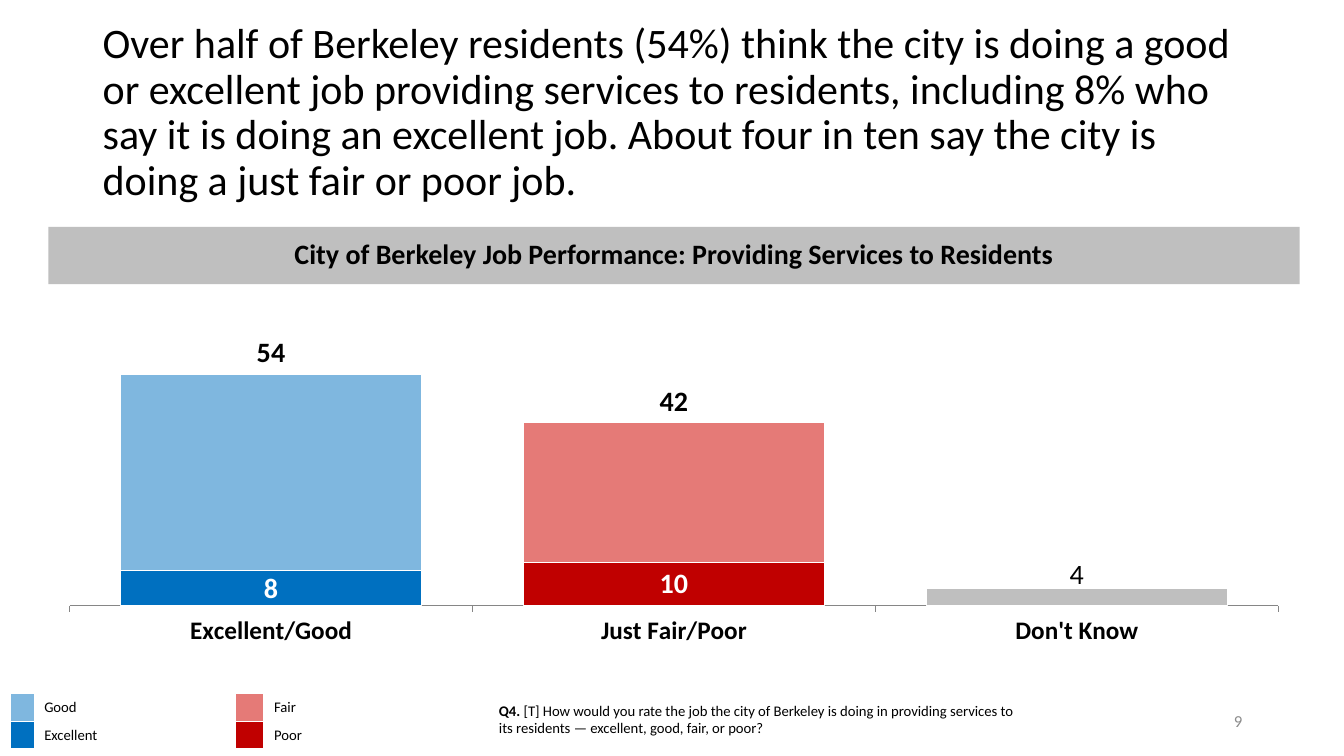
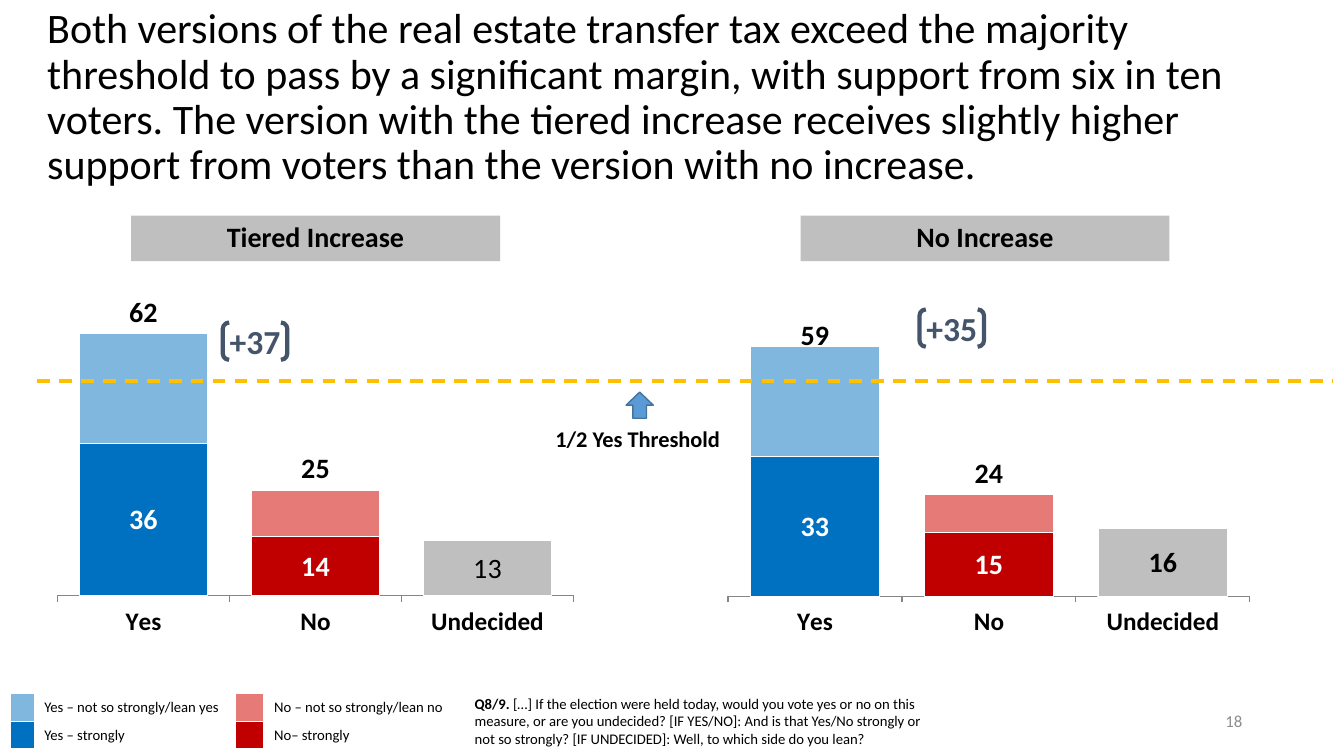
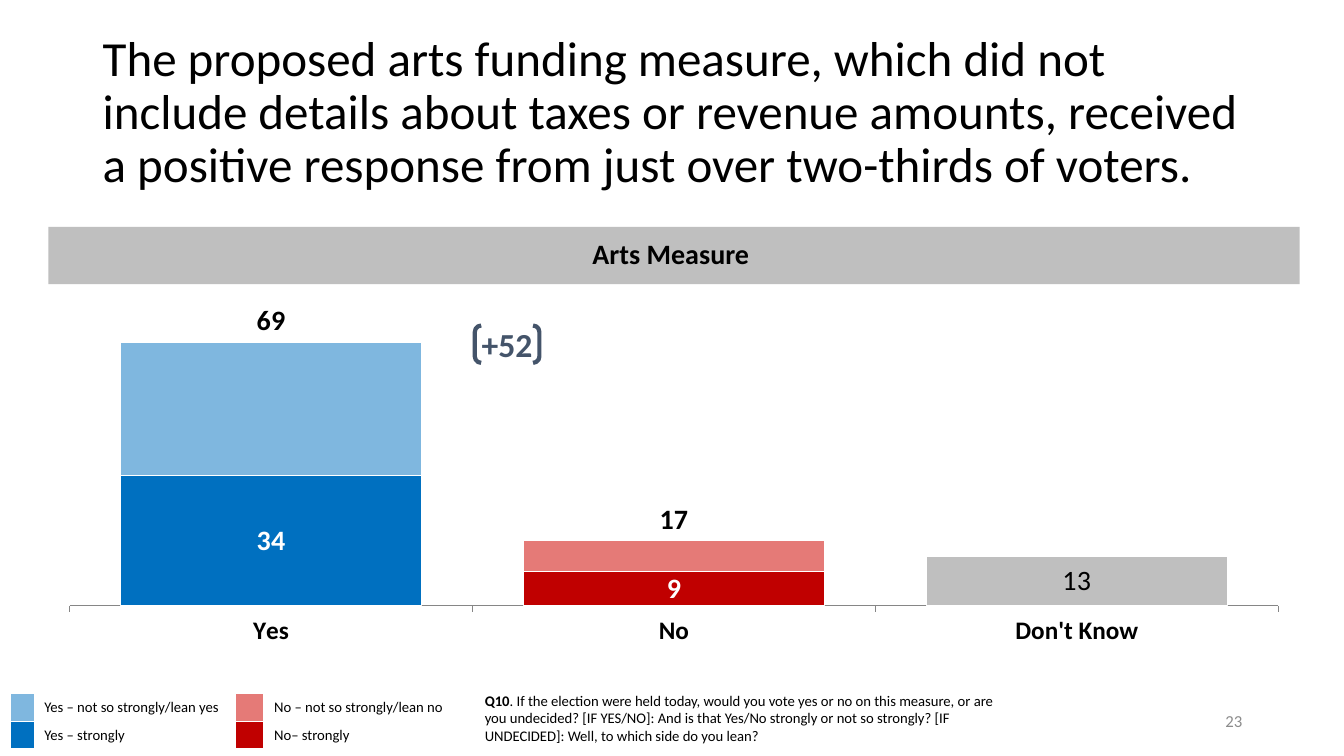
from lxml.etree import SubElement
from pptx import Presentation
from pptx.chart.data import CategoryChartData
from pptx.dml.color import RGBColor
from pptx.enum.chart import XL_CHART_TYPE, XL_LABEL_POSITION, XL_TICK_MARK
from pptx.enum.dml import MSO_LINE
from pptx.enum.shapes import MSO_CONNECTOR, MSO_SHAPE
from pptx.enum.text import MSO_ANCHOR, PP_ALIGN
from pptx.oxml import parse_xml
from pptx.oxml.ns import nsdecls, qn
from pptx.util import Inches, Pt

# Shared style
FACE = "Calibri"
BLACK, WHITE, GREY = "000000", "FFFFFF", "BFBFBF"
BLUE, RED, PINK = "0070C0", "C00000", "E57A77"
SLATE, GOLD = "44546A", "FFC000"
HALF = 50
WIDE = (0.48, 2.25, 12.41, 0.57)
FULL = (0.48, 2.77, 12.41, 3.69)
HEAD = (0.92, 0.4, 11.5, 1.45)
VOTES = [("Yes – not so strongly/lean yes", "No – not so strongly/lean no"),
         ("Yes – strongly", "No– strongly")]


def color(text):
    return RGBColor.from_string(text)


def paint(fill, tint, alpha=None):
    fill.solid()
    fill.fore_color.rgb = color(tint)
    if alpha:
        node = fill._xPr.find(qn("a:solidFill") + "/" + qn("a:srgbClr"))
        SubElement(node, qn("a:alpha"), val=str(alpha * 1000))


def stroke(line, tint, width):
    line.color.rgb = color(tint)
    line.width = Pt(width)


def style(font, size, tint=BLACK, bold=None):
    font.name = FACE
    font.size = Pt(size)
    font.color.rgb = color(tint)
    font.bold = bold


def write(shape, text, size, tint=BLACK, bold=None, align=PP_ALIGN.LEFT,
          anchor=MSO_ANCHOR.MIDDLE, space=None, wrap=True):
    """Fill a shape with one paragraph and return that paragraph."""
    frame = shape.text_frame
    frame.word_wrap = wrap
    frame.vertical_anchor = anchor
    para = frame.paragraphs[0]
    para.text = text
    para.alignment = align
    para.line_spacing = space
    style(para.font, size, tint, bold)
    return para


def add_text(slide, box, text, size, **look):
    shape = slide.shapes.add_textbox(*map(Inches, box))
    return write(shape, text, size, **look)


def add_box(slide, kind, box):
    shape = slide.shapes.add_shape(kind, *map(Inches, box))
    shape.shadow.inherit = False
    return shape


def add_band(slide, box, text):
    band = add_box(slide, MSO_SHAPE.RECTANGLE, box)
    paint(band.fill, GREY)
    band.line.fill.background()
    write(band, text, 20, bold=True, align=PP_ALIGN.CENTER, space=0.9)


def add_lead(slide, left, top, text):
    """Bracketed margin between the two sides."""
    pair = add_box(slide, MSO_SHAPE.DOUBLE_BRACKET, (left, top, 0.64, 0.37))
    pair.adjustments[0] = 0.17
    pair.fill.background()
    stroke(pair.line, SLATE, 3)
    write(pair, text, 24, SLATE, True, PP_ALIGN.CENTER, wrap=False)


def add_query(slide, box, code, text):
    para = add_text(slide, box, "", 10.5, anchor=MSO_ANCHOR.TOP)
    for part, bold in ((code, True), (text, False)):
        run = para.add_run()
        run.text = part
        run.font.bold = bold


# Legend table
def add_edges(cell):
    props = cell._tc.get_or_add_tcPr()
    for spot, side in enumerate(("lnL", "lnR", "lnT", "lnB")):
        props.insert(spot, parse_xml(
            f'<a:{side} {nsdecls("a")} w="12700"><a:solidFill>'
            f'<a:srgbClr val="{WHITE}"/></a:solidFill></a:{side}>'))


def add_key(slide, rows):
    frame = slide.shapes.add_table(2, 4, *map(Inches, (0.1, 6.88, 4.61, 0.55)))
    table = frame.table
    table.first_row = table.horz_banding = False
    for col, width in zip(table.columns, (0.23, 2, 0.28, 2.1)):
        col.width = Inches(width)
    tints = [((BLUE, HALF), (PINK, None)), ((BLUE, None), (RED, None))]
    for r, (names, pair) in enumerate(zip(rows, tints)):
        table.rows[r].height = Inches(0.24)
        for c in range(4):
            cell = table.cell(r, c)
            para = cell.text_frame.paragraphs[0]
            if c % 2:
                cell.fill.background()
                para.text = names[c // 2]
                style(para.font, 10.5)
            else:
                paint(cell.fill, *pair[c // 2])
                SubElement(para._p, qn("a:endParaRPr"), sz="1050")
            add_edges(cell)


# Stacked column chart
def set_plot(chart, top):
    area = chart._chartSpace.chart.plotArea
    old = area.find(qn("c:layout"))
    if old is not None:
        area.remove(old)
    spots = (("x", 0.017), ("y", top), ("w", 0.966), ("h", 0.822))
    area.insert(0, parse_xml(
        f'<c:layout {nsdecls("c")}><c:manualLayout>'
        '<c:layoutTarget val="inner"/>'
        '<c:xMode val="edge"/><c:yMode val="edge"/>'
        + "".join(f'<c:{k} val="{v}"/>' for k, v in spots)
        + "</c:manualLayout></c:layout>"))


def mark(series, spot, bold, shift=0):
    """Give one data label its own weight and vertical shift."""
    label = series.points[spot].data_label
    style(label.font, 20, BLACK, bold)
    if shift:
        node = series._element.xpath(f"c:dLbls/c:dLbl[c:idx/@val='{spot}']")[0]
        node.insert(1, parse_xml(
            f'<c:layout {nsdecls("c")}><c:manualLayout><c:x val="0"/>'
            f'<c:y val="{shift}"/></c:manualLayout></c:layout>'))


def show(series, tint, place):
    labels = series.data_labels
    labels.show_value = True
    labels.position = place
    style(labels.font, 20, tint, True)


def add_bars(slide, box, names, low, high, total, peak=70, top=0.056,
             bold=False, lift=0, drop=0):
    data = CategoryChartData()
    data.categories = names
    for num, vals in enumerate((low, high, total), 1):
        data.add_series(f"Series {num}", list(vals) + [None] * (3 - len(vals)))
    chart = slide.shapes.add_chart(
        XL_CHART_TYPE.COLUMN_STACKED, *map(Inches, box), data).chart
    chart.has_title = chart.has_legend = False
    style(chart.font, 14)
    set_plot(chart, top)

    axis = chart.value_axis
    axis.minimum_scale, axis.maximum_scale = 0, peak
    axis.has_major_gridlines = False
    axis.visible = False
    axis = chart.category_axis
    axis.major_tick_mark = XL_TICK_MARK.OUTSIDE
    style(axis.tick_labels.font, 18, bold=True)
    stroke(axis.format.line, "868686", 0.75)

    plot = chart.plots[0]
    plot.gap_width, plot.overlap = 34, 100
    plot.vary_by_categories = False
    base, upper, sums = plot.series
    paint(base.format.fill, "002060")
    paint(upper.format.fill, "8497B0")
    sums.format.fill.background()
    for series in plot.series:
        stroke(series.format.line, WHITE, 0.75)
    tints = ((base, ((BLUE,), (RED,), (GREY,))),
             (upper, ((BLUE, HALF), (PINK,))))
    for series, shades in tints:
        for spot, shade in enumerate(shades):
            form = series.points[spot].format
            paint(form.fill, *shade)
            stroke(form.line, WHITE, 0.75)
    show(base, WHITE, XL_LABEL_POSITION.CENTER)
    show(sums, BLACK, XL_LABEL_POSITION.INSIDE_BASE)
    mark(base, 2, bold, lift)
    if drop:
        mark(sums, 0, True, drop)
        sums.points[0].data_label.position = XL_LABEL_POSITION.INSIDE_BASE


def add_page(deck, title, number, rows, box=HEAD, size=30):
    """Blank slide with the title, legend and page number."""
    slide = deck.slides.add_slide(deck.slide_layouts[6])
    add_text(slide, box, title, size, space=0.9)
    add_key(slide, rows)
    add_text(slide, (9.42, 6.95, 3, 0.4), number, 12, tint="8C8C8C",
             align=PP_ALIGN.RIGHT)
    return slide


def add_limit(slide):
    """Dashed threshold line with its arrow and caption."""
    line = slide.shapes.add_connector(
        MSO_CONNECTOR.STRAIGHT, *map(Inches, (0.37, 3.78, 13.22, 3.78)))
    stroke(line.line, GOLD, 2.25)
    line.line.dash_style = MSO_LINE.DASH
    SubElement(line._element.spPr, qn("a:effectLst"))
    arrow = add_box(slide, MSO_SHAPE.UP_ARROW, (6.21, 3.89, 0.27, 0.26))
    paint(arrow.fill, "5B9BD5")
    stroke(arrow.line, "43739E", 1)
    add_text(slide, (5.38, 4.17, 1.89, 0.37), "1/2 Yes Threshold", 16,
             bold=True, align=PP_ALIGN.CENTER, anchor=MSO_ANCHOR.TOP)


def main():
    deck = Presentation()
    deck.slide_width, deck.slide_height = Inches(13.33), Inches(7.5)

    # City services
    slide = add_page(
        deck, "Over half of Berkeley residents (54%) think the city is doing "
        "a good or excellent job providing services to residents, including "
        "8% who say it is doing an excellent job. About four in ten say the "
        "city is doing a just fair or poor job.", "9",
        [("Good", "Fair"), ("Excellent", "Poor")])
    add_bars(slide, FULL, ("Excellent/Good", "Just Fair/Poor", "Don't Know"),
             (8, 10, 4), (45, 32), (54, 42), lift=-0.06)
    add_band(slide, WIDE, "City of Berkeley Job Performance: "
             "Providing Services to Residents")
    add_query(slide, (4.85, 6.91, 5.45, 0.45), "Q4. ",
              "[T] How would you rate the job the city of Berkeley is doing in "
              "providing services to its residents — excellent, good, fair, "
              "or poor?")

    # Transfer tax
    slide = add_page(
        deck, "Both versions of the real estate transfer tax exceed the "
        "majority threshold to pass by a significant margin, with support "
        "from six in ten voters. The version with the tiered increase "
        "receives slightly higher support from voters than the version with "
        "no increase.", "18", VOTES, box=(0.37, 0.25, 12.6, 1.45))
    names = ("Yes", "No", "Undecided")
    add_bars(slide, (0.48, 2.77, 5.3, 3.58), names,
             (36, 14, 13), (26, 11), (62, 25))
    add_bars(slide, (7.13, 2.8, 5.36, 3.58), names,
             (33, 15, 16), (26, 9), (59, 24), top=0.048, bold=True, drop=0.03)
    for left, text in ((1.3, "Tiered Increase"), (7.94, "No Increase")):
        add_band(slide, (left, 2.14, 3.66, 0.45), text)
    add_limit(slide)
    add_lead(slide, 2.21, 3.2, "+37")
    add_lead(slide, 9.12, 3.07, "+35")
    ask = ("If the election were held today, would you vote yes or no on this "
           "measure, or are you undecided? [IF YES/NO]: And is that Yes/No "
           "strongly or not so strongly? [IF UNDECIDED]: Well, to which side "
           "do you lean?")
    add_query(slide, (4.61, 6.84, 4.75, 0.63), "Q8/9. ", "[…] " + ask)

    # Arts funding
    slide = add_page(
        deck, "The proposed arts funding measure, which did not include "
        "details about taxes or revenue amounts, received a positive response "
        "from just over two-thirds of voters.", "23", VOTES, size=35)
    add_bars(slide, FULL, ("Yes", "No", "Don't Know"),
             (34, 9, 13), (35, 8), (69, 17), peak=80)
    add_band(slide, WIDE, "Arts Measure ")
    add_query(slide, (4.71, 6.81, 5.45, 0.63), "Q10", ". " + ask)
    add_lead(slide, 4.71, 3.23, "+52")

    deck.save("out.pptx")


if __name__ == "__main__":
    main()
